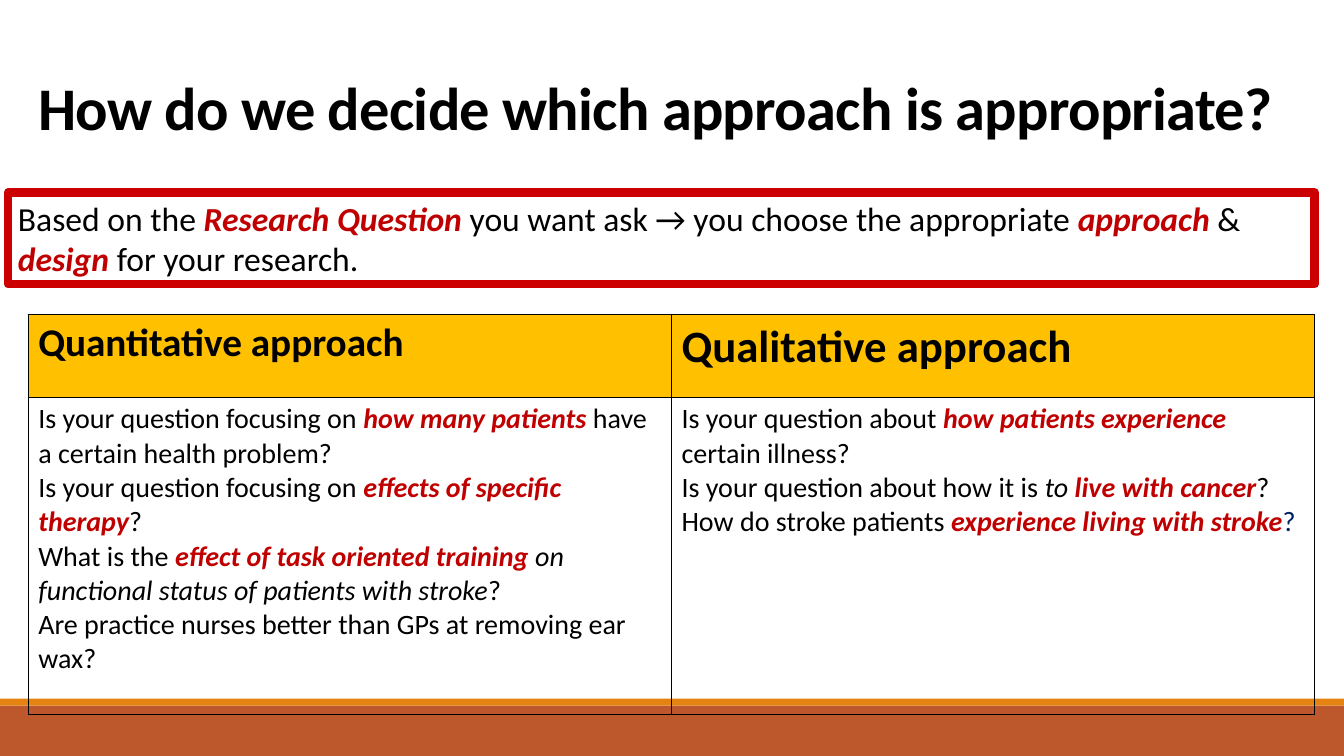
from lxml import etree
from pptx import Presentation
from pptx.dml.color import RGBColor
from pptx.enum.shapes import MSO_SHAPE
from pptx.enum.text import MSO_ANCHOR
from pptx.oxml.ns import qn
from pptx.util import Inches, Pt

RECT = MSO_SHAPE.RECTANGLE
TOP, BOTTOM = MSO_ANCHOR.TOP, MSO_ANCHOR.BOTTOM

BLACK = RGBColor(0x00, 0x00, 0x00)
RUST = RGBColor(0xBD, 0x58, 0x2C)
ORANGE = RGBColor(0xE4, 0x83, 0x12)
GOLD = RGBColor(0xFF, 0xC0, 0x00)
FRAME_RED = RGBColor(0xCC, 0x00, 0x00)
KEY_RED = RGBColor(0xC0, 0x00, 0x00)
NAVY = RGBColor(0x00, 0x20, 0x60)

FONT = "Calibri"
W, H = Inches(13.33), Inches(7.5)
MARGIN = 2.1

KEY = dict(color=KEY_RED, bold=True, italic=True)
ITALIC = dict(italic=True)

TITLE = "How do we decide which approach is appropriate?"
STATEMENT = [
    ("Based on the ", {}), ("Research Question ", KEY),
    ("you want ask → you choose the appropriate ", {}),
    ("approach ", KEY), ("& ", {}), ("design", KEY),
    (" for your research.", {}),
]
QUANTITATIVE = [
    [("Is your question focusing on ", {}), ("how many patients ", KEY),
     ("have a certain health problem?", {})],
    [("Is your question focusing on ", {}),
     ("effects of specific therapy", KEY), ("?", {})],
    [("What is the ", {}), ("effect of task oriented training ", KEY),
     ("on functional status of patients with stroke", ITALIC), ("?", {})],
    [("Are practice nurses better than GPs at removing ear wax?", {})],
]
QUALITATIVE = [
    [("Is your question about ", {}), ("how patients experience ", KEY),
     ("certain illness?", {})],
    [("Is your question about how it is ", {}), ("to ", ITALIC),
     ("live with cancer", KEY), ("?", {})],
    [("How do stroke patients ", {}),
     ("experience living with stroke", KEY), ("?", dict(color=NAVY))],
]
# heading, heading size, questions
APPROACHES = [
    ("Quantitative approach", 28, QUANTITATIVE),
    ("Qualitative approach", 32, QUALITATIVE),
]


def across(percent):
    return round(W * percent / 100)


def down(percent):
    return round(H * percent / 100)


def box(left, top, width, height):
    """Turn percentages of the slide into a position and size."""
    return across(left), down(top), across(width), down(height)


def add_run(p, text, size=20, color=BLACK, bold=False, italic=False, spacing=0):
    r = p.add_run()
    r.text = text
    font = r.font
    font.name, font.size = FONT, Pt(size)
    font.bold, font.italic = bold, italic
    font.color.rgb = color
    if spacing:
        r._r.get_or_add_rPr().set("spc", str(round(spacing * 100)))


def write(tf, paragraphs, line_spacing=None, anchor=TOP, **base):
    """Fill a text frame; each paragraph is a list of (text, format) runs."""
    tf.word_wrap = True
    tf.vertical_anchor = anchor
    for i, runs in enumerate(paragraphs):
        p = tf.add_paragraph() if i else tf.paragraphs[0]
        if line_spacing:
            p.line_spacing = line_spacing
        for text, style in runs:
            add_run(p, text, **{**base, **style})


def add_rect(s, place, fill=None, line=None, line_width=0):
    sp = s.shapes.add_shape(RECT, *place)
    sp.shadow.inherit = False
    if fill:
        sp.fill.solid()
        sp.fill.fore_color.rgb = fill
    else:
        sp.fill.background()
    if line:
        sp.line.color.rgb = line
        sp.line.width = Pt(line_width)
    else:
        sp.line.fill.background()
    return sp


def add_statement(s):
    sp = add_rect(s, box(0.6, 25.47, 97.22, 12.13),
                  line=FRAME_RED, line_width=6)
    write(sp.text_frame, [STATEMENT], size=24)
    sp.text_frame.paragraphs[0].alignment = 1


def add_borders(cell, color=BLACK, width=1):
    tc_pr = cell._tc.get_or_add_tcPr()
    for side in ("lnL", "lnR", "lnT", "lnB"):
        ln = etree.SubElement(tc_pr, qn(f"a:{side}"), w=str(Pt(width)))
        fill = etree.SubElement(ln, qn("a:solidFill"))
        etree.SubElement(fill, qn("a:srgbClr"), val=str(color))


def fill_cell(cell, paragraphs, fill=None, **base):
    add_borders(cell)
    if fill:
        cell.fill.solid()
        cell.fill.fore_color.rgb = fill
    else:
        cell.fill.background()
    write(cell.text_frame, paragraphs, **base)


def add_approach_table(s):
    row_heights = (10.93, 42)
    place = box(MARGIN, 41.6, 95.72, sum(row_heights))
    table = s.shapes.add_table(2, len(APPROACHES), *place).table
    table.first_row = table.horz_banding = False
    for row, height in zip(table.rows, row_heights):
        row.height = down(height)
    for col, (heading, size, questions) in enumerate(APPROACHES):
        fill_cell(table.cell(0, col), [[(heading, {})]], GOLD,
                  size=size, bold=True)
        fill_cell(table.cell(1, col), questions)


def main():
    prs = Presentation()
    prs.slide_width, prs.slide_height = W, H
    s = prs.slides.add_slide(prs.slide_layouts[6])

    add_rect(s, box(0, 93.33, 100, 6.67), RUST)
    add_rect(s, box(0, 92.4, 100, 0.93), ORANGE)

    title = s.shapes.add_textbox(*box(MARGIN, 6.67, 97.3, 12.93))
    write(title.text_frame, [[(TITLE, {})]], line_spacing=0.85,
          anchor=BOTTOM, size=43.2, bold=True, spacing=-0.5)

    add_approach_table(s)
    add_statement(s)
    prs.save("out.pptx")


if __name__ == "__main__":
    main()
